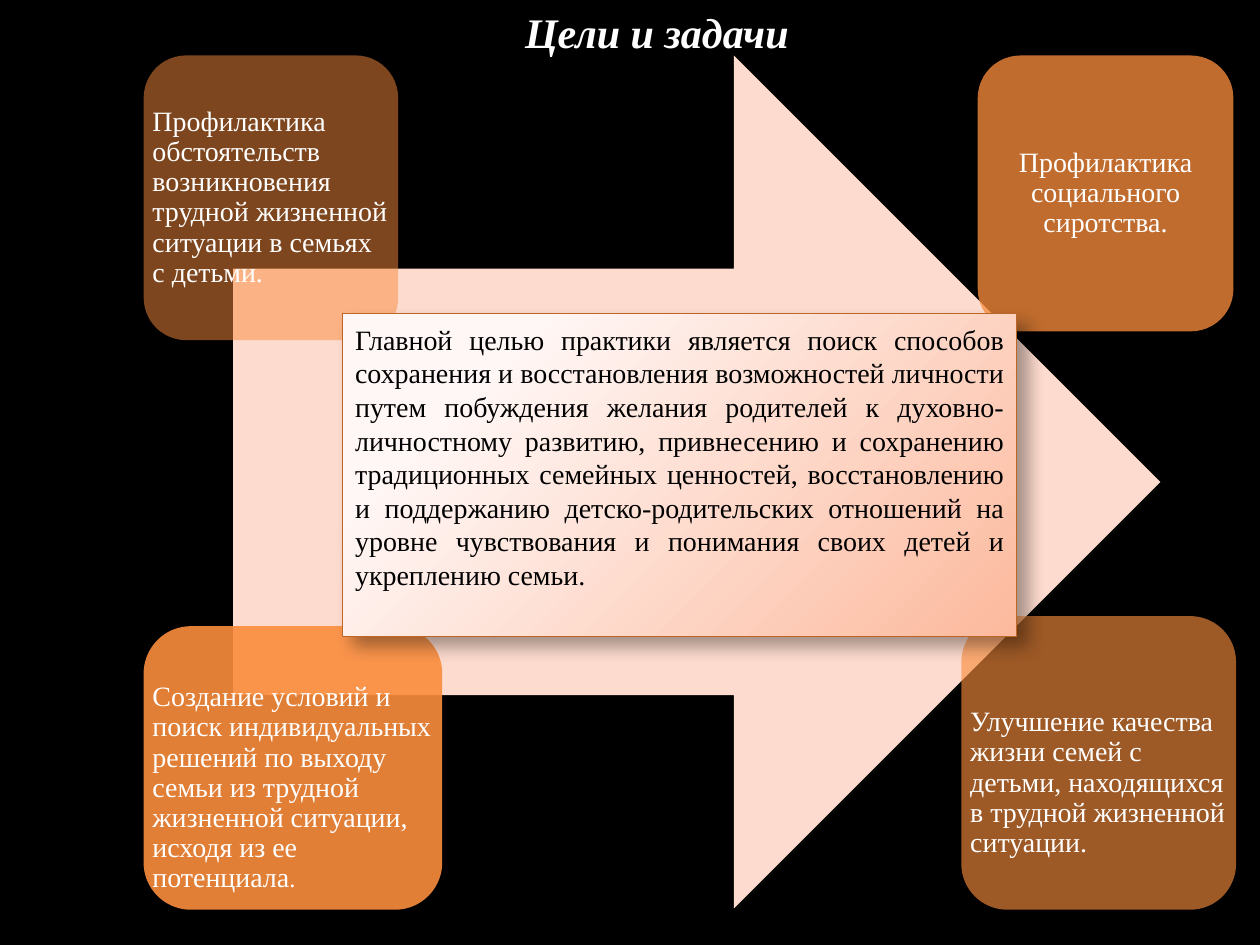
"""Build the goals and tasks slide."""
from lxml.etree import SubElement
from pptx import Presentation
from pptx.dml.color import RGBColor
from pptx.enum.shapes import MSO_SHAPE
from pptx.enum.text import MSO_ANCHOR, PP_ALIGN
from pptx.oxml import parse_xml
from pptx.oxml.ns import nsdecls, qn
from pptx.util import Inches, Pt

FONT = "Times New Roman"
WHITE, BLACK, ORANGE = "FFFFFF", "000000", "FA8D3D"
TITLE = "Цели и задачи "
GOAL = ("Главной целью практики является поиск способов сохранения и восстановления "
        "возможностей личности путем побуждения желания родителей к "
        "духовно-личностному развитию, привнесению и сохранению традиционных семейных "
        "ценностей, восстановлению и поддержанию детско-родительских отношений на "
        "уровне чувствования и понимания своих детей и укреплению семьи.")
INSET, LOWERED = 0.07, 0.39
TASKS = [
    dict(box=(1.14, 4.97, 2.37, 2.25), alpha=90, top=LOWERED, align=PP_ALIGN.LEFT,
         runs=[("Создание условий и поиск индивидуальных решений по выходу семьи из "
                "трудной жизненной ситуации, исходя из ее потенциала", 16), (".", 14)]),
    dict(box=(7.76, 0.44, 2.03, 2.19), alpha=77, top=INSET, align=PP_ALIGN.CENTER,
         runs=[("Профилактика социального сиротства.", 16)]),
    dict(box=(7.63, 4.89, 2.18, 2.33), alpha=63, top=LOWERED, align=PP_ALIGN.LEFT,
         runs=[("Улучшение качества жизни семей с детьми, находящихся в трудной "
                "жизненной ситуации.", 16)]),
    dict(box=(1.14, 0.44, 2.02, 2.26), alpha=50, top=INSET, align=PP_ALIGN.LEFT,
         runs=[("Профилактика обстоятельств возникновения трудной жизненной ситуации "
                "в семьях с детьми.", 16)]),
]
GRADIENT = f"""<a:gradFill {nsdecls('a')} rotWithShape="1"><a:gsLst>
<a:gs pos="20000"><a:srgbClr val="FFF7F5"/></a:gs>
<a:gs pos="100000"><a:srgbClr val="FCB99D"/></a:gs></a:gsLst>
<a:path path="circle"><a:fillToRect l="-15000" t="-15000" r="115000" b="115000"/></a:path>
</a:gradFill>"""
SHADOW = f"""<a:outerShdw {nsdecls('a')} blurRad="{Pt(10.2)}" dist="{Pt(8)}" dir="2700000"
algn="tl" rotWithShape="0"><a:srgbClr val="000000"><a:alpha val="35000"/></a:srgbClr>
</a:outerShdw>"""


def color(value):
    return RGBColor.from_string(value)


def inches(box):
    return [Inches(v) for v in box]


def add_shape(s, kind, box, fill, alpha=100):
    sp = s.shapes.add_shape(kind, *inches(box))
    sp.shadow.inherit = False
    sp.line.fill.background()
    sp.fill.solid()
    sp.fill.fore_color.rgb = color(fill)
    if alpha < 100:
        clr = sp._element.spPr.find(qn("a:solidFill"))[0]
        SubElement(clr, qn("a:alpha")).set("val", str(alpha * 1000))
    return sp


def write(sp, runs, rgb, frame, para, **font):
    tf = sp.text_frame
    p = tf.paragraphs[0]
    for target, values in ((tf, {"word_wrap": True, **frame}), (p, para)):
        for name, value in values.items():
            setattr(target, name, value)
    for text, size in runs:
        r = p.add_run()
        r.text = text
        for name, value in {"name": FONT, "size": Pt(size), **font}.items():
            setattr(r.font, name, value)
        r.font.color.rgb = color(rgb)


def add_task(s, box, alpha, top, align, runs):
    add_shape(s, MSO_SHAPE.ROUNDED_RECTANGLE, box, ORANGE, alpha)
    frame = {f"margin_{side}": Inches(INSET) for side in ("left", "right", "bottom")}
    frame.update(margin_top=Inches(top), vertical_anchor=MSO_ANCHOR.MIDDLE)
    write(s.shapes.add_textbox(*inches(box)), runs, WHITE, frame,
          {"alignment": align, "line_spacing": 0.9})


def add_goal(s):
    sp = add_shape(s, MSO_SHAPE.RECTANGLE, (2.72, 2.49, 5.35, 2.56), WHITE)
    sp.line.color.rgb = color("BD6525")
    sp.line.width = Pt(0.75)
    props = sp._element.spPr
    props.replace(props.find(qn("a:solidFill")), parse_xml(GRADIENT))
    props.find(qn("a:effectLst")).append(parse_xml(SHADOW))
    write(sp, [(GOAL, 16)], BLACK,
          {"vertical_anchor": MSO_ANCHOR.MIDDLE, "margin_bottom": Inches(0.34)},
          {"alignment": PP_ALIGN.JUSTIFY})


def main():
    prs = Presentation()
    prs.slide_width, prs.slide_height = Inches(10), Inches(7.5)
    s = prs.slides.add_slide(prs.slide_layouts[6])
    s.background.fill.solid()
    s.background.fill.fore_color.rgb = color(BLACK)
    write(s.shapes.add_textbox(*inches((3.27, 0, 3.97, 0.5))), [(TITLE, 24)], WHITE,
          {}, {"alignment": PP_ALIGN.CENTER}, bold=True, italic=True)
    add_shape(s, MSO_SHAPE.RIGHT_ARROW, (1.85, 0.44, 7.36, 6.77), "FDDBCE")
    for task in TASKS:
        add_task(s, **task)
    add_goal(s)
    prs.save("out.pptx")


if __name__ == "__main__":
    main()
